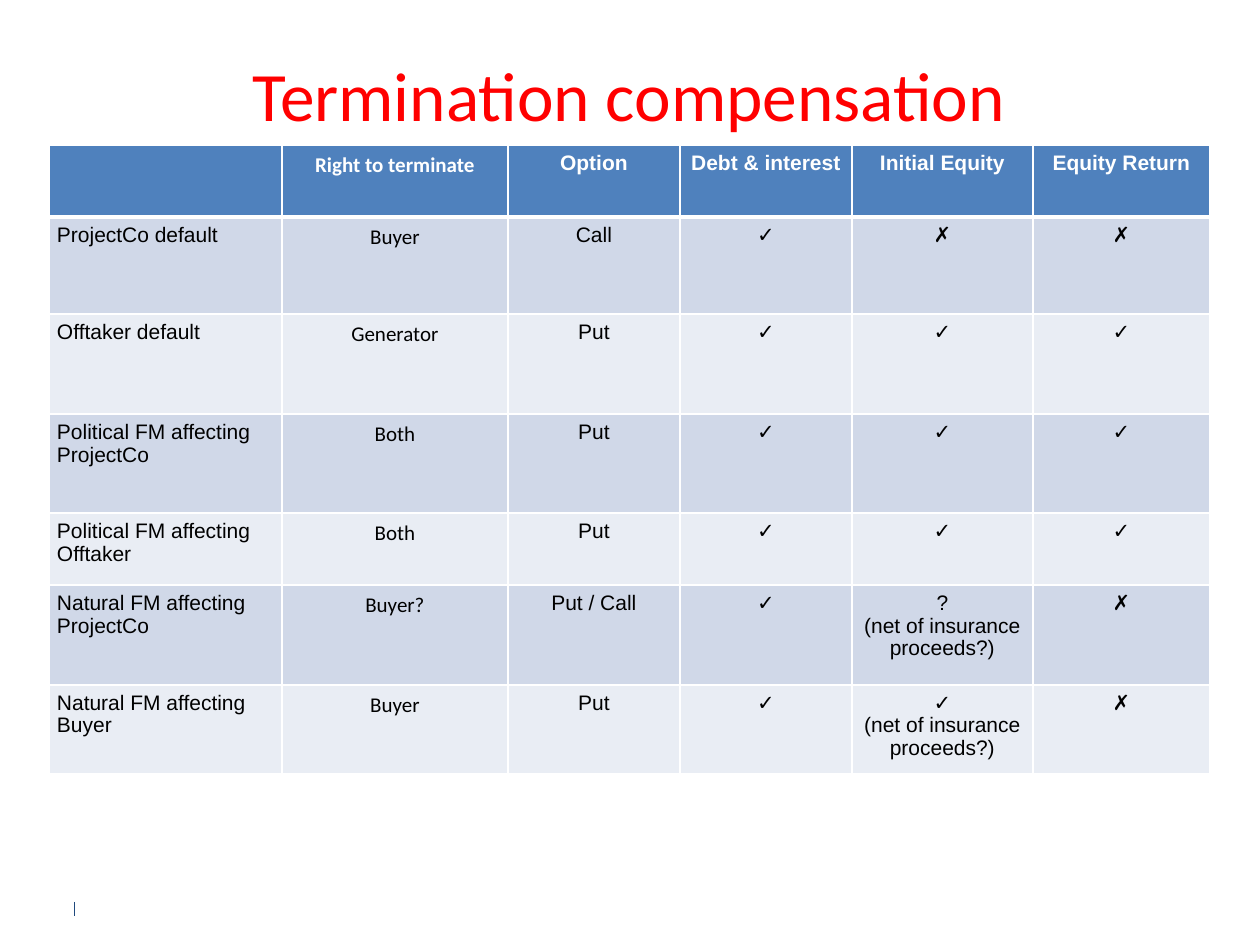
import dataclasses

import lxml.etree
import pptx
import pptx.dml.color
import pptx.enum.shapes
import pptx.enum.text
import pptx.oxml.ns
import pptx.util

RGB = pptx.dml.color.RGBColor
ALIGN = pptx.enum.text.PP_ALIGN
ANCHOR = pptx.enum.text.MSO_ANCHOR

PX_PER_INCH = 126
RED = RGB(0xFF, 0x00, 0x00)
WHITE = RGB(0xFF, 0xFF, 0xFF)
BLACK = RGB(0x00, 0x00, 0x00)
NAVY = RGB(0x1F, 0x49, 0x7D)
HEADER_BLUE = RGB(0x4F, 0x81, 0xBD)
BANDS = (RGB(0xD0, 0xD8, 0xE8), RGB(0xE9, 0xED, 0xF4))

YES = "✓"
NO = "✗"
INSURANCE = "(net of insurance proceeds?)"
HEADINGS = ("", "Right to terminate", "Option", "Debt & interest", "Initial Equity", "Equity Return")
COLUMN_WIDTHS = (233, 226, 172, 172, 181, 177)
HEADER_HEIGHT = 72
TERMINATOR_COLUMN = 1
CELL_INSET = 8


@dataclasses.dataclass(frozen=True)
class Case:
    event: str
    terminator: str
    option: str
    debt: str
    equity: str
    equity_return: str
    height: int


CASES = (
    Case("ProjectCo default", "Buyer", "Call", YES, NO, NO, 97),
    Case("Offtaker default", "Generator", "Put", YES, YES, YES, 100),
    Case("Political FM affecting ProjectCo", "Both", "Put", YES, YES, YES, 99),
    Case("Political FM affecting Offtaker", "Both", "Put", YES, YES, YES, 72),
    Case("Natural FM affecting ProjectCo", "Buyer?", "Put / Call", YES, f"?\n{INSURANCE}", NO, 100),
    Case("Natural FM affecting Buyer", "Buyer", "Put", YES, f"{YES}\n{INSURANCE}", NO, 89),
)


def px(n: int) -> pptx.util.Emu:
    return pptx.util.Emu(round(n * 914400 / PX_PER_INCH))


def write(tf, text: str, *, size: float = 12, font: str = "Arial", color: RGB = BLACK,
          bold: bool = False, align=ALIGN.CENTER, spacing: float = 1.0) -> None:
    for i, line in enumerate(text.split("\n")):
        p = tf.paragraphs[0] if i == 0 else tf.add_paragraph()
        p.alignment = align
        p.line_spacing = spacing
        r = p.add_run()
        r.text = line
        r.font.size = pptx.util.Pt(size)
        r.font.name = font
        r.font.bold = bold
        r.font.color.rgb = color


def add_title(slide, text: str) -> None:
    sp = slide.shapes.add_textbox(px(49), px(59), px(1160), px(69))
    tf = sp.text_frame
    tf.word_wrap = True
    tf.vertical_anchor = ANCHOR.MIDDLE
    write(tf, text, size=39.6, font="Calibri", color=RED)


def add_footer_mark(slide) -> None:
    sp = slide.shapes.add_connector(
        pptx.enum.shapes.MSO_CONNECTOR.STRAIGHT, px(74), px(902), px(74), px(916))
    sp.line.color.rgb = NAVY
    sp.line.width = pptx.util.Pt(0.5)
    lxml.etree.SubElement(sp._element.spPr, pptx.oxml.ns.qn("a:effectLst"))


def set_borders(cell, **widths: float) -> None:
    qn = pptx.oxml.ns.qn
    tcPr = cell._tc.get_or_add_tcPr()
    for side in "LRTB":
        width = pptx.util.Pt(widths.get(side, 1))
        ln = lxml.etree.SubElement(tcPr, qn(f"a:ln{side}"), w=str(int(width)))
        fill = lxml.etree.SubElement(ln, qn("a:solidFill"))
        lxml.etree.SubElement(fill, qn("a:srgbClr"), val=str(WHITE))


def fill_cell(cell, text: str, row: int, column: int) -> None:
    header = row == 0
    cell.margin_left = cell.margin_right = px(CELL_INSET)
    cell.margin_top = cell.margin_bottom = px(CELL_INSET)
    set_borders(cell, B=3 if header else 1, T=3 if row == 1 else 1)
    cell.fill.solid()
    cell.fill.fore_color.rgb = HEADER_BLUE if header else BANDS[(row - 1) % 2]
    if text:
        write(cell.text_frame, text, bold=header, spacing=0.95,
              font="Calibri" if column == TERMINATOR_COLUMN else "Arial",
              color=WHITE if header else BLACK,
              align=ALIGN.LEFT if column == 0 else ALIGN.CENTER)


def add_compensation_table(slide) -> None:
    heights = (HEADER_HEIGHT, *(case.height for case in CASES))
    rows = (HEADINGS, *(dataclasses.astuple(case)[:-1] for case in CASES))
    table = slide.shapes.add_table(
        len(rows), len(HEADINGS), px(49), px(145), px(sum(COLUMN_WIDTHS)), px(sum(heights))).table
    for column, width in zip(table.columns, COLUMN_WIDTHS):
        column.width = px(width)
    for row, height in zip(table.rows, heights):
        row.height = px(height)
    for i, texts in enumerate(rows):
        for j, text in enumerate(texts):
            fill_cell(table.cell(i, j), text, i, j)


def main() -> None:
    prs = pptx.Presentation()
    prs.slide_width = px(1260)
    prs.slide_height = px(945)
    slide = prs.slides.add_slide(prs.slide_layouts[6])
    add_footer_mark(slide)
    add_title(slide, "Termination compensation")
    add_compensation_table(slide)
    prs.save("out.pptx")


if __name__ == "__main__":
    main()
